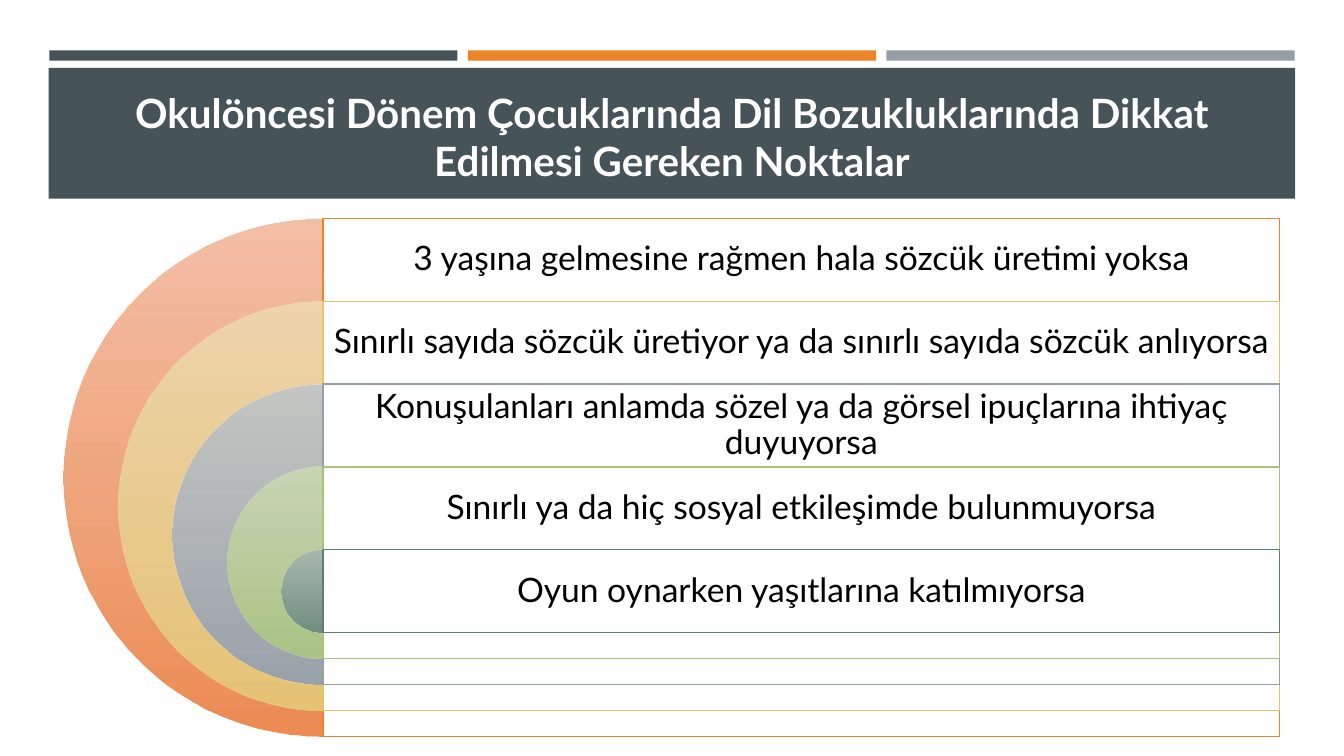
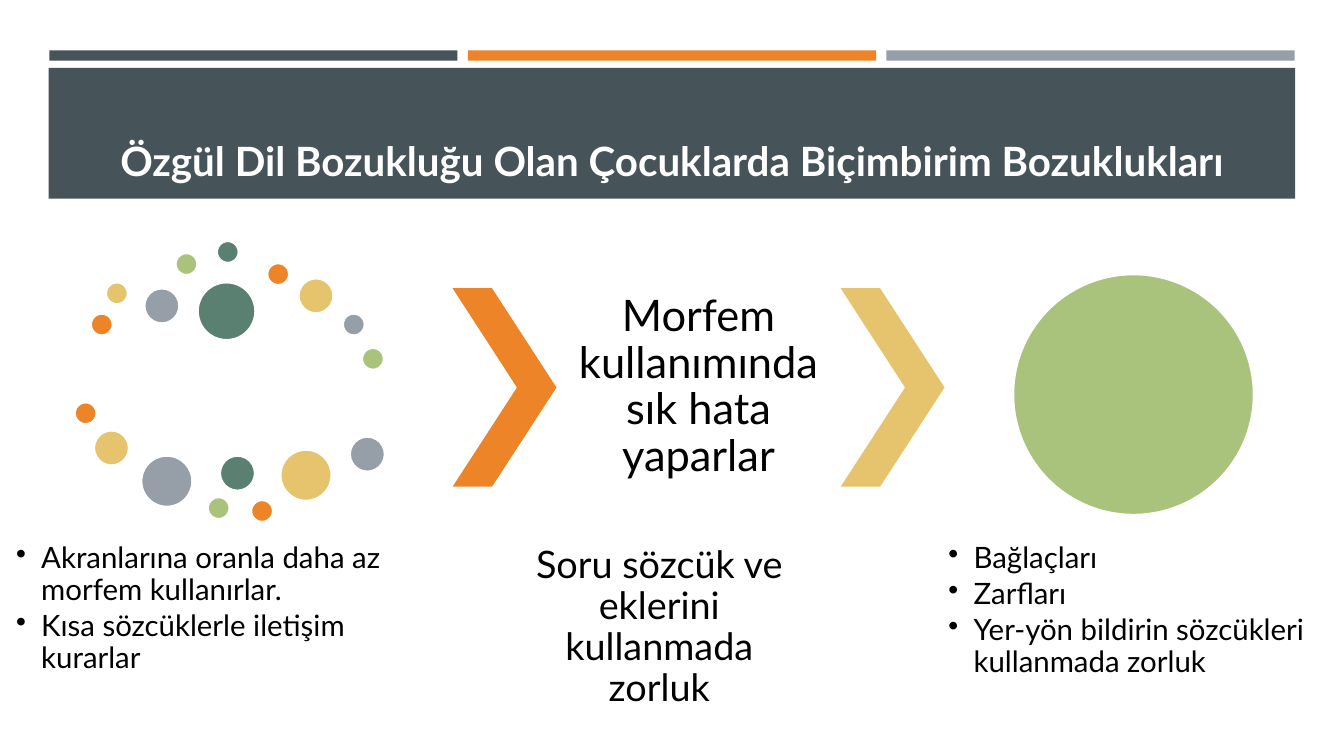
"""Build two slides on language disorders in preschool children."""
from lxml import etree
from pptx import Presentation
from pptx.dml.color import RGBColor
from pptx.enum import shapes, text
from pptx.oxml import ns
from pptx.util import Pt

FONT = "Lato"
WHITE = RGBColor(0xFF, 0xFF, 0xFF)
BLACK = RGBColor(0x00, 0x00, 0x00)
SLATE = RGBColor(0x46, 0x53, 0x59)
ORANGE = RGBColor(0xED, 0x84, 0x28)
GOLD = RGBColor(0xE6, 0xC4, 0x6D)
GREY = RGBColor(0x96, 0x9F, 0xA7)
GREEN = RGBColor(0xA9, 0xC3, 0x7C)
TEAL = RGBColor(0x5A, 0x80, 0x71)
CYCLE = [ORANGE, GOLD, GREY, GREEN, TEAL]
FADES = [
    (RGBColor(0xF3, 0xB8, 0x9D), RGBColor(0xED, 0x8C, 0x53)),
    (RGBColor(0xEE, 0xD9, 0xAE), RGBColor(0xE6, 0xC4, 0x76)),
    (RGBColor(0xC0, 0xC5, 0xC9), RGBColor(0x9B, 0xA3, 0xAB)),
    (RGBColor(0xCA, 0xD9, 0xB4), RGBColor(0xAC, 0xC4, 0x85)),
    (RGBColor(0xA8, 0xB6, 0xB0), RGBColor(0x72, 0x8E, 0x82)),
]
KIND = shapes.MSO_SHAPE
ANCHOR = text.MSO_ANCHOR
ALPHA = ns.qn("a:alpha")


def draw(slide, kind, box, fill, line=None, width=1):
    """Add a flat preset shape."""
    shape = slide.shapes.add_shape(kind, *map(Pt, box))
    shape.shadow.inherit = False
    shape.fill.solid()
    shape.fill.fore_color.rgb = fill
    if line is None:
        shape.line.fill.background()
    else:
        shape.line.color.rgb = line
        shape.line.width = Pt(width)
    return shape


def write(slide, box, lines, size, color=BLACK, bold=False, anchor=ANCHOR.MIDDLE,
          pad=(2.9, 2.9), space=0.9, bullet=False):
    """Add a wrapped text box, centred or bulleted."""
    frame = slide.shapes.add_textbox(*map(Pt, box)).text_frame
    frame.word_wrap = True
    frame.vertical_anchor = anchor
    frame.margin_left = frame.margin_right = Pt(pad[0])
    frame.margin_top = frame.margin_bottom = Pt(pad[1])
    frame.text = "\n".join(lines)
    for para in frame.paragraphs:
        para.line_spacing = space
        if bullet:
            para.space_after = Pt(3.15)
            props = para._p.get_or_add_pPr()
            props.set("marL", str(Pt(18)))
            props.set("indent", str(-Pt(18)))
            etree.SubElement(props, ns.qn("a:buChar")).set("char", "•")
        else:
            para.alignment = text.PP_ALIGN.CENTER
        for run in para.runs:
            run.font.name = FONT
            run.font.size = Pt(size)
            run.font.bold = bold
            run.font.color.rgb = color


deck = Presentation()
deck.slide_width, deck.slide_height = Pt(960), Pt(540)
TITLES = [
    "Okulöncesi Dönem Çocuklarında Dil Bozukluklarında Dikkat Edilmesi Gereken Noktalar",
    "Özgül Dil Bozukluğu Olan Çocuklarda Biçimbirim Bozuklukları",
]
for title in TITLES:
    slide = deck.slides.add_slide(deck.slide_layouts[6])
    for i, color in enumerate([SLATE, ORANGE, GREY]):
        draw(slide, KIND.RECTANGLE, (35.2 + 299 * i, 36, 291.6, 7.4), color)
    draw(slide, KIND.RECTANGLE, (34.8, 48.5, 890.4, 93.5), SLATE)
    write(slide, (46, 55.4, 868.3, 79.9), [title], 28.8, WHITE, True,
          ANCHOR.BOTTOM, (7.2, 3.6), 1)
signs, forms = deck.slides

POINTS = [
    "3 yaşına gelmesine rağmen hala sözcük üretimi yoksa",
    "Sınırlı sayıda sözcük üretiyor ya da sınırlı sayıda sözcük anlıyorsa",
    "Konuşulanları anlamda sözel ya da görsel ipuçlarına ihtiyaç duyuyorsa",
    "Sınırlı ya da hiç sosyal etkileşimde bulunmuyorsa",
    "Oyun oynarken yaşıtlarına katılmıyorsa",
]
MID, WIDE, STEP = 230.7, 683.3, 59.15
for i, (point, color, fade) in enumerate(zip(POINTS, CYCLE, FADES)):
    top, size = 156.1 + STEP * i, 370 - 77.7 * i
    arc = draw(signs, KIND.PIE, (MID - size / 2, top, size, size), color)
    arc.adjustments[0], arc.adjustments[1] = 54, 162
    arc.fill.gradient()
    arc.fill.gradient_angle = 270
    for stop, shade, place in zip(arc.fill.gradient_stops, fade, (0, 1)):
        stop.color.rgb = shade
        stop.position = place
    panel = draw(signs, KIND.RECTANGLE, (MID, top, WIDE, size), WHITE, color)
    first = arc._element.spPr.find(".//" + ns.qn("a:srgbClr"))
    back = panel._element.spPr.find(ns.qn("a:solidFill"))[0]
    for node in (first, back):
        etree.SubElement(node, ALPHA).set("val", "90000")
    write(signs, (MID, top, WIDE, STEP), [point], 24, pad=(7.2, 7.2))

DOTS = [
    (64.8, 223.9, 15.8), (75.6, 201.6, 15.8), (103, 205.9, 25.2),
    (125.3, 180.7, 15.8), (154.8, 172.1, 15.8), (190.8, 187.9, 15.8),
    (213.1, 198.7, 25.2), (244.8, 223.9, 15.8), (258.5, 248.4, 15.8),
    (141.1, 201.6, 41.4), (53.3, 287.3, 15.8), (67, 307.4, 25.2),
    (100.8, 325.4, 36.7), (148.3, 355, 15.8), (157, 325.4, 25.2),
    (179.3, 357.1, 15.8), (200.2, 321.1, 36.7), (249.8, 311.8, 25.2),
]
for i, (left, top, size) in enumerate(DOTS):
    draw(forms, KIND.OVAL, (left, top, size, size), CYCLE[i % 5], WHITE, 1.75)
draw(forms, KIND.OVAL, (723.6, 195.8, 172.1, 172.1), GREEN, WHITE, 1.75)
for left, color in [(323.3, ORANGE), (600.5, GOLD)]:
    arrow = draw(forms, KIND.CHEVRON, (left, 205.9, 74.2, 141.8), color)
    arrow.adjustments[0] = 0.62
write(forms, (397.4, 205.9, 203, 141.8), ["Morfem kullanımında sık hata yaparlar"], 31)
write(forms, (369.4, 385.9, 203, 125.3), ["Soru sözcük ve eklerini kullanmada zorluk"], 27)
LISTS = [
    (8.6, 314.6, ["Akranlarına oranla daha az morfem kullanırlar.",
                  "Kısa sözcüklerle iletişim kurarlar"]),
    (674.6, 270.7, ["Bağlaçları", "Zarfları",
                    "Yer-yön bildirin sözcükleri kullanmada zorluk"]),
]
for left, width, items in LISTS:
    write(forms, (left, 385.2, width, 125.3), items, 21, anchor=ANCHOR.TOP, bullet=True)

deck.save("out.pptx")
